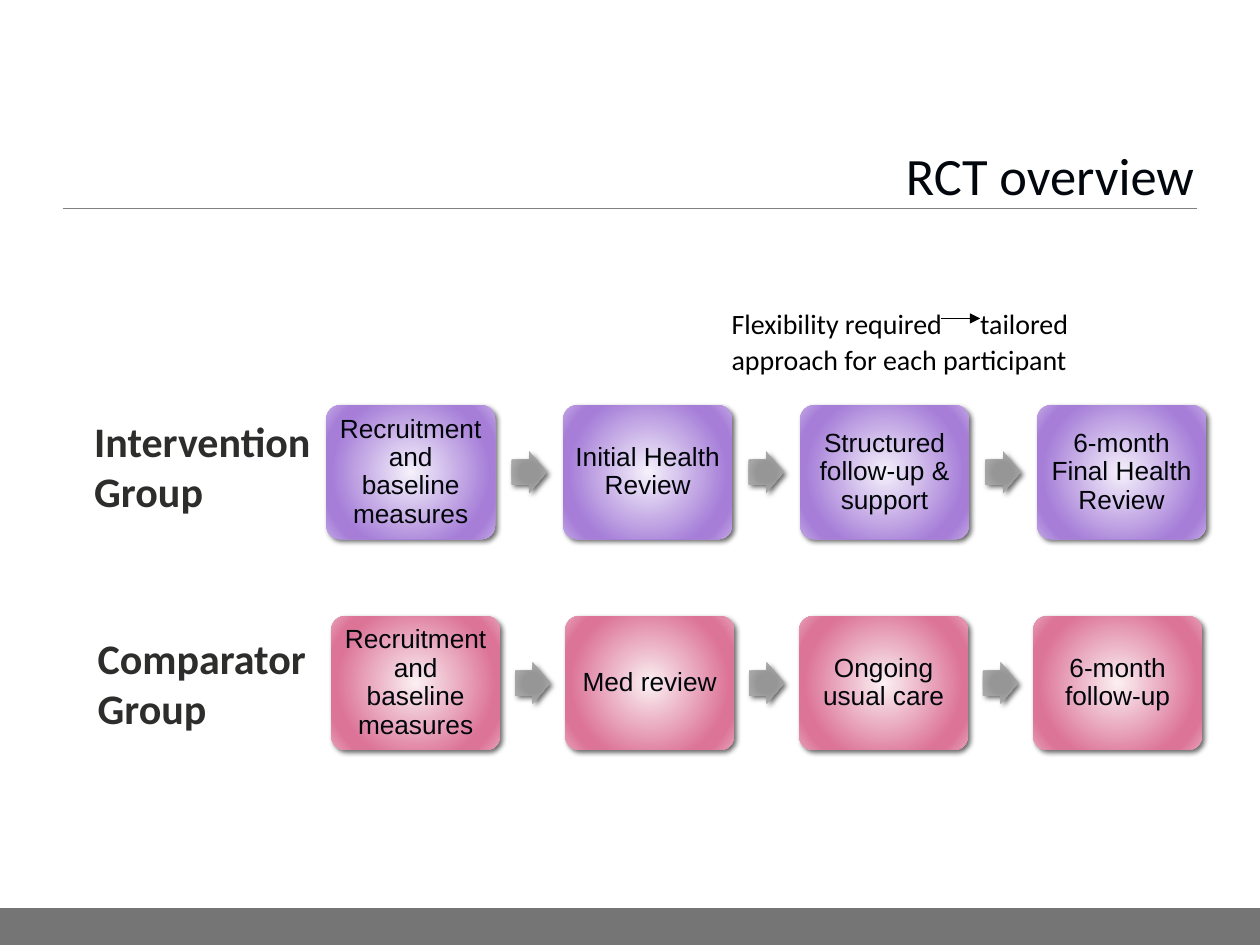
from lxml.etree import SubElement
from pptx import Presentation
from pptx.dml.color import RGBColor
from pptx.enum.shapes import MSO_CONNECTOR, MSO_SHAPE
from pptx.enum.text import MSO_ANCHOR, PP_ALIGN
from pptx.oxml import parse_xml
from pptx.oxml.ns import nsdecls, qn
from pptx.util import Cm, Pt

BLACK = RGBColor(0, 0, 0)
WHITE = RGBColor(255, 255, 255)
TITLE_INK = RGBColor(0x02, 0x07, 0x0E)
STEP_INK = RGBColor(0x02, 0x05, 0x0A)
LABEL_INK = RGBColor(0x2D, 0x2D, 0x2C)
RULE_GREY = RGBColor(0x80, 0x80, 0x80)
FOOTER_GREY = RGBColor(0x75, 0x75, 0x75)


def stops(positions, colours):
    """Pair gradient positions with their colours."""
    return [(position, RGBColor.from_string(colour)) for position, colour in zip(positions, colours)]


BOX_POSITIONS = (0, 74, 83, 100)
PURPLE = stops(BOX_POSITIONS, ("F5F1FB", "A67ED8", "A67ED8", "C4A9E5"))
PINK = stops(BOX_POSITIONS, ("FBF0F3", "DC7497", "DC7497", "E8A3BA"))
ARROW_GREY = stops((0, 34, 70, 100), ("969696", "969696", "A7A7A7", "AFAFAF"))


def style_text(paragraph, font_name, size, colour, bold=False):
    """Set the font of a whole paragraph."""
    font = paragraph.font
    font.name, font.size, font.bold = font_name, Pt(size), bold
    font.color.rgb = colour


def set_insets(frame, horizontal, vertical):
    """Set the inner margins of a text frame in centimetres."""
    frame.margin_left = frame.margin_right = Cm(horizontal)
    frame.margin_top = frame.margin_bottom = Cm(vertical)


def add_glowing_shape(page, kind, left, top, width, height, gradient, focus):
    """Add a borderless shape with a circular gradient and a soft shadow."""
    shape = page.shapes.add_shape(kind, Cm(left), Cm(top), Cm(width), Cm(height))
    shape.shadow.inherit = False
    shape.line.fill.background()
    colours = "".join(
        f'<a:gs pos="{position * 1000}"><a:srgbClr val="{colour}"/></a:gs>'
        for position, colour in gradient
    )
    sides = " ".join(f'{side}="{focus * 1000}"' for side in "ltrb")
    properties = shape._element.spPr
    properties.find(qn("a:ln")).addprevious(parse_xml(
        f'<a:gradFill {nsdecls("a")} rotWithShape="1"><a:gsLst>{colours}</a:gsLst>'
        f'<a:path path="circle"><a:fillToRect {sides}/></a:path></a:gradFill>'
    ))
    properties.find(qn("a:effectLst")).append(parse_xml(
        f'<a:outerShdw {nsdecls("a")} blurRad="{Pt(3)}" dist="{Pt(2)}" dir="2700000" rotWithShape="0">'
        '<a:srgbClr val="000000"><a:alpha val="60000"/></a:srgbClr></a:outerShdw>'
    ))
    return shape


def add_line(page, left, right, top, colour, weight):
    """Add a horizontal line without a shadow."""
    line = page.shapes.add_connector(MSO_CONNECTOR.STRAIGHT, Cm(left), Cm(top), Cm(right), Cm(top))
    line.line.color.rgb = colour
    line.line.width = Pt(weight)
    SubElement(line._element.spPr, qn("a:effectLst"))
    return line


def add_header(page, left, top, width, height):
    """Place the title with the rule below it."""
    title = page.shapes.title
    title.left, title.top, title.width, title.height = Cm(left), Cm(top), Cm(width), Cm(height)
    title.text_frame.text = "RCT overview"
    title.text_frame.vertical_anchor = MSO_ANCHOR.MIDDLE
    paragraph = title.text_frame.paragraphs[0]
    paragraph.alignment = PP_ALIGN.RIGHT
    style_text(paragraph, "Calibri", 30, TITLE_INK)
    add_line(page, left - 0.2, left + width - 0.2, top + 1.59, RULE_GREY, 0.5)


def add_footer(page, left, top, width, height):
    """Place the grey band along the bottom."""
    band = page.shapes.add_shape(MSO_SHAPE.RECTANGLE, Cm(left), Cm(top), Cm(width), Cm(height))
    band.shadow.inherit = False
    band.fill.solid()
    band.fill.fore_color.rgb = FOOTER_GREY
    band.line.fill.background()


def add_process(page, left, top, width, height, steps, gradient):
    """Spread the steps evenly over the width with an arrow in each gap."""
    box_width, arrow_width, arrow_height = 3.4, 0.71, 0.84
    pitch = (width - box_width) / (len(steps) - 1)
    for index, step in enumerate(steps):
        box_left = left + index * pitch
        box = add_glowing_shape(page, MSO_SHAPE.ROUNDED_RECTANGLE, box_left, top,
                                box_width, height, gradient, 50)
        box.adjustments[0] = 0.1
        frame = box.text_frame
        frame.word_wrap = True
        frame.vertical_anchor = MSO_ANCHOR.MIDDLE
        set_insets(frame, 0.14, 0.14)
        frame.text = step
        paragraph = frame.paragraphs[0]
        paragraph.alignment = PP_ALIGN.CENTER
        paragraph.line_spacing = 0.9
        style_text(paragraph, "Arial", 15, STEP_INK)
        if index:
            arrow_left = box_left - (pitch - box_width + arrow_width) / 2
            arrow = add_glowing_shape(page, MSO_SHAPE.RIGHT_ARROW, arrow_left,
                                      top + (height - arrow_height) / 2,
                                      arrow_width, arrow_height, ARROW_GREY, 100)
            arrow.adjustments[0] = 0.6


def add_group_label(page, left, top, width, height, text):
    """Place the bold name of a study group."""
    label = page.shapes.add_textbox(Cm(left), Cm(top), Cm(width), Cm(height))
    label.text_frame.word_wrap = True
    label.text_frame.text = text
    style_text(label.text_frame.paragraphs[0], "Calibri", 24, LABEL_INK, bold=True)


def add_flexibility_note(page, left, top, width, height):
    """Place the note and the small arrow inside its first line."""
    inset, gap_start, gap_end = 0.18, 4.4, 5.19
    note = page.shapes.add_textbox(Cm(left), Cm(top), Cm(width), Cm(height))
    note.fill.solid()
    note.fill.fore_color.rgb = WHITE
    frame = note.text_frame
    frame.word_wrap = True
    set_insets(frame, inset, 0.1)
    frame.text = "Flexibility required\ttailored approach for each participant"
    paragraph = frame.paragraphs[0]
    paragraph.line_spacing = 1.07
    tabs = SubElement(paragraph._p.get_or_add_pPr(), qn("a:tabLst"))
    SubElement(tabs, qn("a:tab"), pos=str(Cm(gap_end - inset)), algn="l")
    style_text(paragraph, "Calibri", 16, BLACK)
    arrow = add_line(page, left + gap_start, left + gap_end, top + 0.39, BLACK, 0.75)
    SubElement(arrow._element.spPr.find(qn("a:ln")), qn("a:tailEnd"), type="triangle")


def main():
    """Build the trial overview slide."""
    deck = Presentation()
    deck.slide_width, deck.slide_height = Cm(25.4), Cm(19.05)
    page = deck.slides.add_slide(deck.slide_layouts[5])
    add_footer(page, 0, 18.31, 25.4, 0.74)
    add_header(page, 1.47, 2.61, 22.86, 1.83)
    add_process(page, 6.68, 12.42, 17.55, 2.7, (
        "Recruitment and baseline measures", "Med review",
        "Ongoing usual care", "6-month follow-up"), PINK)
    add_process(page, 6.58, 8.17, 17.73, 2.7, (
        "Recruitment and baseline measures", "Initial Health Review",
        "Structured follow-up & support", "6-month Final Health Review"), PURPLE)
    add_group_label(page, 1.65, 8.25, 5.69, 2.31, "Intervention Group")
    add_group_label(page, 1.72, 12.62, 5.54, 2.31, "Comparator Group")
    add_flexibility_note(page, 14.57, 6.03, 7.47, 1.7)
    deck.save("out.pptx")


if __name__ == "__main__":
    main()
